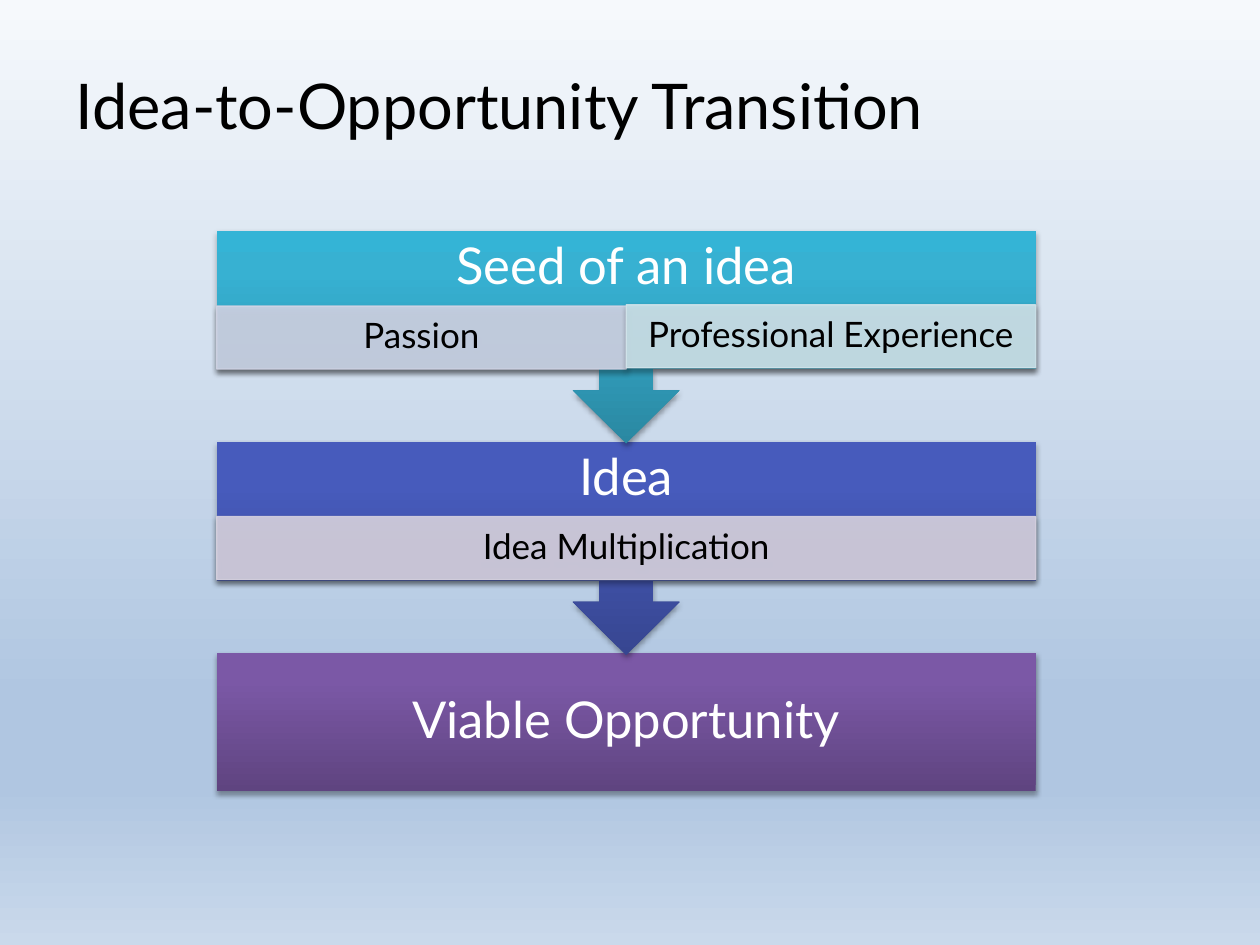
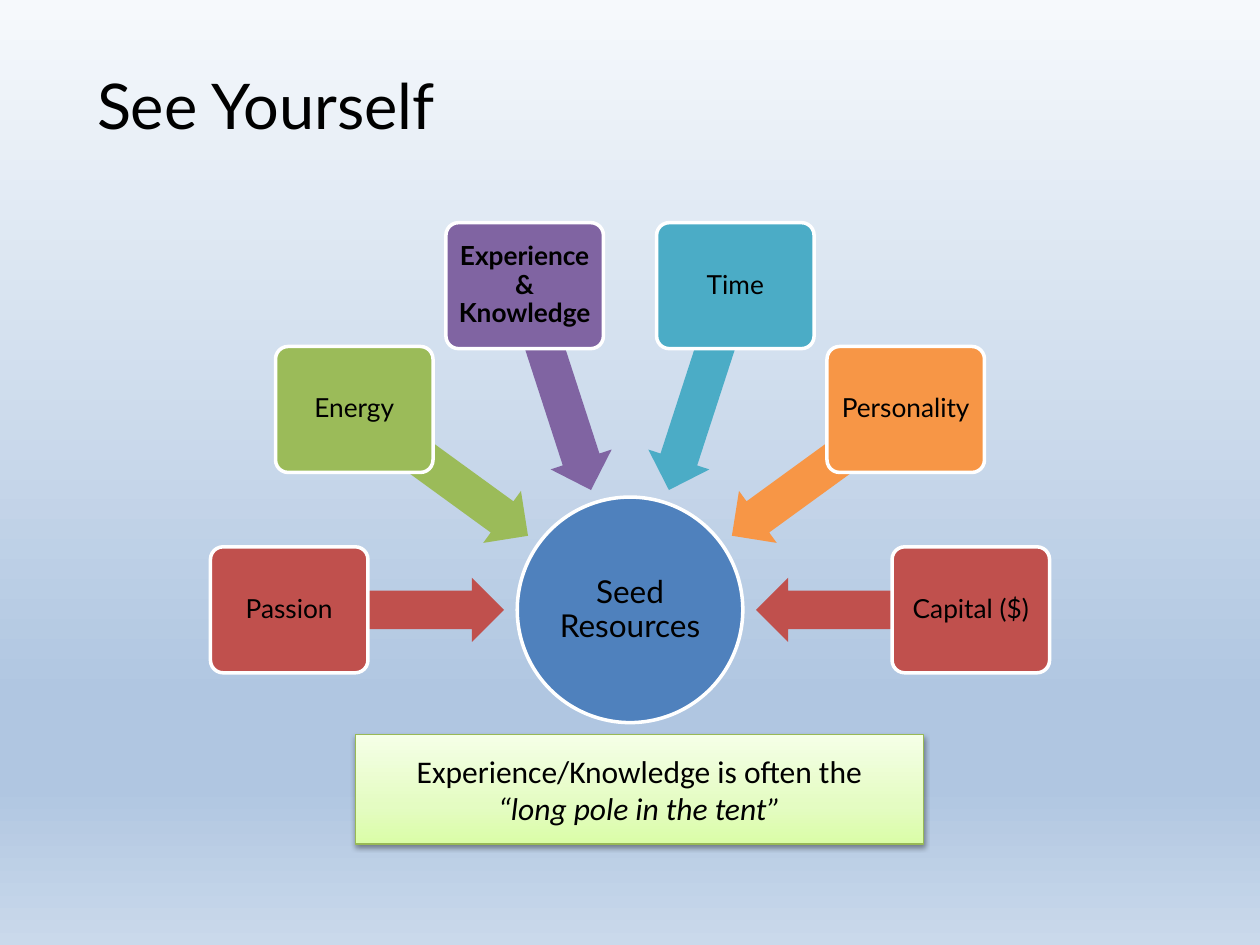
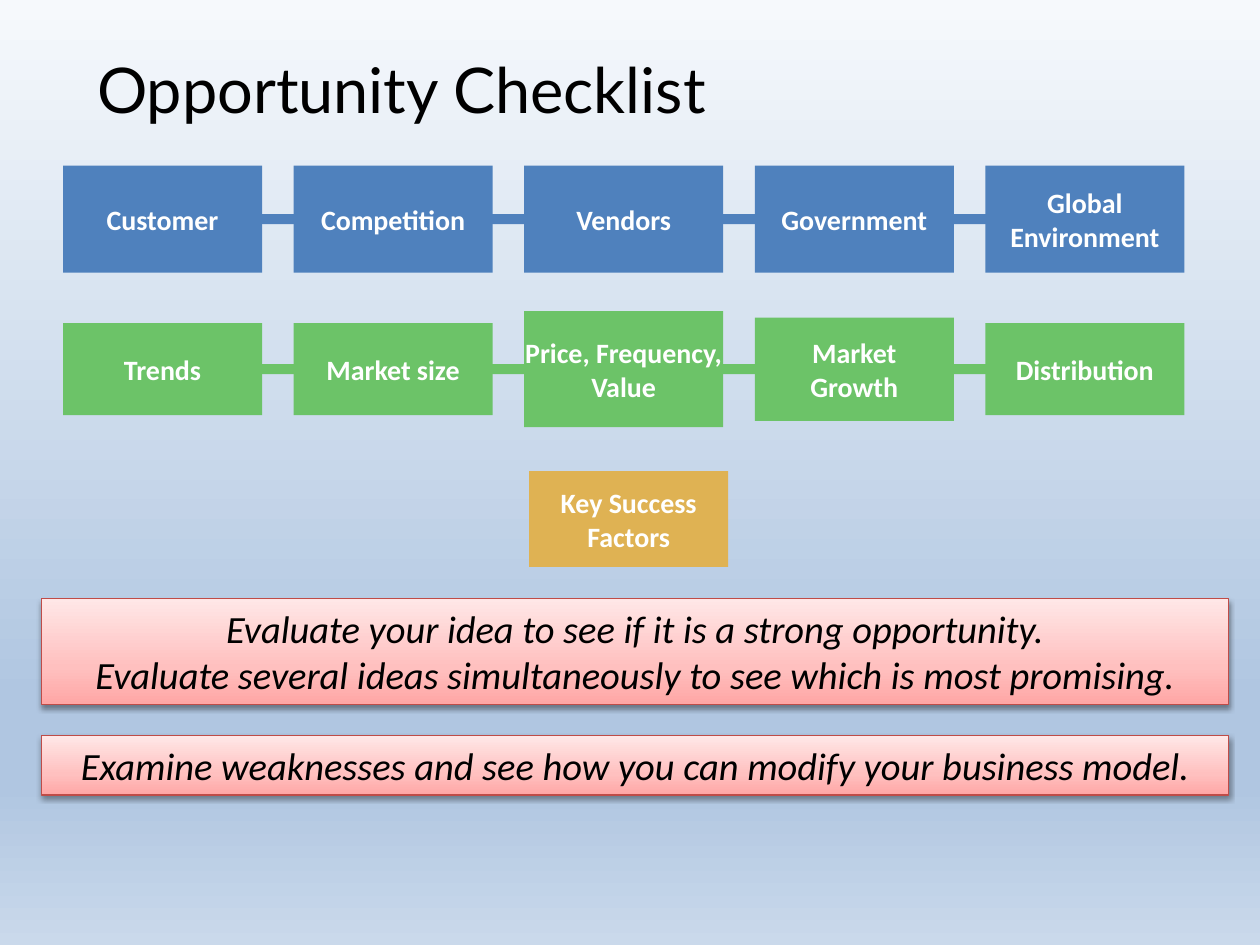
from math import cos, sin, radians

from lxml.etree import SubElement
from pptx import Presentation
from pptx.dml.color import RGBColor
from pptx.enum.shapes import MSO_SHAPE as SHAPE
from pptx.enum.text import MSO_ANCHOR, PP_ALIGN as ALIGN
from pptx.oxml.ns import qn
from pptx.util import Inches, Pt

COLORS = {
    "black": "000000", "white": "FFFFFF",
    "blue": "4F81BD", "red": "C0504D", "lime": "9BBB59", "purple": "8064A2",
    "teal": "4BACC6", "orange": "F79646", "green": "6CC368", "gold": "DFB253",
    "pale_blue": "D1D4E5", "pale_teal": "D0E3EA", "pale_purple": "D8D3E0",
    "lime_edge": "98B955", "red_edge": "BF4C48",
}
GRADIENTS = {
    "background": [(0, "F6F9FC"), (74, "B0C6E1"), (83, "B0C6E1"), (100, "CAD9EB")],
    "teal": [(0, "2A88A2"), (80, "37B1D2"), (100, "34B4D6")],
    "indigo": [(0, "374691"), (80, "475BBC"), (100, "455ABF")],
    "violet": [(0, "5F4480"), (80, "7B58A6"), (100, "7C57A8")],
    "lime": [(0, "DAFDA7"), (35, "E4FCC2"), (100, "F5FFE7")],
    "pink": [(0, "FFA6A5"), (35, "FFC0BF"), (100, "FFE7E7")],
}
HEADING, BODY = "Lato", "Calibri"

STAGES = [
    ("Seed of an idea", "teal", 1.83),
    ("Idea", "indigo", 3.51),
    ("Viable Opportunity", "violet", 5.18),
]
INPUTS = [
    ("Passion", "pale_blue", 1.72, 2.43, 3.25),
    ("Professional Experience", "pale_teal", 4.97, 2.42, 3.25),
    ("Idea Multiplication", "pale_purple", 1.72, 4.1, 6.5),
]
RESOURCES = [
    ("Passion", "red"),
    ("Energy", "lime"),
    ("Experience & Knowledge", "purple"),
    ("Time", "teal"),
    ("Personality", "orange"),
    ("Capital ($)", "red"),
]
POLE_NOTE = ["Experience/Knowledge is often the", "“long pole in the tent”"]
CHECK_ROWS = [
    ("green", 2.93, 8.5, [
        (["Trends"], 0.73),
        (["Market size"], 0.73),
        (["Price, Frequency,", "Value"], 0.92),
        (["Market", "Growth"], 0.82),
        (["Distribution"], 0.73),
    ]),
    ("blue", 1.74, 8.67, [
        (["Customer"], 0.85),
        (["Competition"], 0.85),
        (["Vendors"], 0.85),
        (["Government"], 0.85),
        (["Global", "Environment"], 0.85),
    ]),
]
ADVICE = [
    (4.75, 0.84, ["Evaluate your idea to see if it is a strong opportunity.",
                  "Evaluate several ideas simultaneously to see which is most promising."]),
    (5.84, 0.47, ["Examine weaknesses and see how you can modify your business model."]),
]


def rgb(name):
    return RGBColor.from_string(COLORS[name])


def set_gradient(fill, element, name, angle):
    fill.gradient()
    fill.gradient_angle = angle
    stops = element.find(".//" + qn("a:gsLst"))
    stops.clear()
    for pos, color in GRADIENTS[name]:
        gs = SubElement(stops, qn("a:gs"), pos=str(pos * 1000))
        SubElement(gs, qn("a:srgbClr"), val=color)


def add_shadow(sp, alpha, dist):
    effects = sp.element.spPr.find(qn("a:effectLst"))
    shadow = SubElement(effects, qn("a:outerShdw"), blurRad=str(Pt(3.1)), dist=str(Pt(dist)),
                        dir="5400000", rotWithShape="0")
    color = SubElement(shadow, qn("a:srgbClr"), val=COLORS["black"])
    SubElement(color, qn("a:alpha"), val=str(alpha * 1000))


def add_box(s, kind, x, y, w, h, color=None, gradient=None, edge=None, edge_width=0.75,
            alpha=None, shadow=None):
    sp = s.shapes.add_shape(kind, Inches(x), Inches(y), Inches(w), Inches(h))
    sp.shadow.inherit = False
    if gradient:
        set_gradient(sp.fill, sp.element, gradient, 90)
    else:
        sp.fill.solid()
        sp.fill.fore_color.rgb = rgb(color)
    if edge:
        sp.line.color.rgb = rgb(edge)
        sp.line.width = Pt(edge_width)
    else:
        sp.line.fill.background()
    if alpha:
        for clr in sp.element.spPr.iter(qn("a:srgbClr")):
            SubElement(clr, qn("a:alpha"), val=str(alpha * 1000))
    if shadow:
        add_shadow(sp, *shadow)
    return sp


def write(sp, lines, size=16, color="black", font=HEADING, bold=False, italic_from=None,
          align=ALIGN.CENTER, spacing=None, insets=(0.1, 0.05, 0.1, 0.05), wrap=True):
    tf = sp.text_frame
    tf.word_wrap = wrap
    tf.vertical_anchor = MSO_ANCHOR.MIDDLE
    tf.margin_left, tf.margin_top, tf.margin_right, tf.margin_bottom = map(Inches, insets)
    for i, line in enumerate(lines):
        p = tf.add_paragraph() if i else tf.paragraphs[0]
        p.alignment = align
        if spacing:
            p.line_spacing = spacing
        r = p.add_run()
        r.text = line
        r.font.name = font
        r.font.size = Pt(size)
        r.font.bold = bold
        r.font.italic = italic_from is not None and i >= italic_from
        r.font.color.rgb = rgb(color)


def add_slide(prs, title, x, y, w, h):
    s = prs.slides.add_slide(prs.slide_layouts[5])
    sp = s.shapes.title
    sp.left, sp.top, sp.width, sp.height = map(Inches, (x, y, w, h))
    write(sp, [title], size=36, align=ALIGN.LEFT)
    return s


def build_transition(prs):
    s = add_slide(prs, "Idea-to-Opportunity Transition", 0.5, 0.29, 9.09, 1.08)
    soft = (35, 1.8)
    for i, (label, gradient, y) in reversed(list(enumerate(STAGES))):
        last = i == len(STAGES) - 1
        kind, h = (SHAPE.RECTANGLE, 1.1) if last else (SHAPE.DOWN_ARROW_CALLOUT, 1.69)
        sp = add_box(s, kind, 1.72, y, 6.5, h, gradient=gradient, shadow=soft)
        write(sp, [label], size=29, color="white", spacing=0.9,
              insets=(0.23, 0, 0.23, 0 if last else 0.51))
    for label, color, x, y, w in INPUTS:
        sp = add_box(s, SHAPE.RECTANGLE, x, y, w, 0.5, color, edge=color, alpha=90, shadow=soft)
        write(sp, [label], size=20, spacing=0.9, insets=(0.16, 0.03, 0.16, 0.03))


def build_resources(prs):
    s = add_slide(prs, "See Yourself", 0.67, 0.29, 8.92, 1.08)
    cx, cy, hub = 5, 4.84, 1.79
    arrow_w, arrow_h, arrow_radius = 1.71, 0.51, 1.855
    box_w, box_h, box_radius = 1.25, 1, 2.705
    sp = add_box(s, SHAPE.OVAL, cx - hub / 2, cy - hub / 2, hub, hub, "blue",
                 edge="white", edge_width=2)
    write(sp, ["Seed Resources"], size=18, spacing=0.9, insets=(0.01,) * 4)
    step = 180 / (len(RESOURCES) - 1)
    for i, (label, color) in enumerate(RESOURCES):
        dx, dy = cos(radians(i * step)), sin(radians(i * step))
        arrow = add_box(s, SHAPE.LEFT_ARROW, cx - arrow_radius * dx - arrow_w / 2,
                        cy - arrow_radius * dy - arrow_h / 2, arrow_w, arrow_h, color)
        arrow.adjustments[0] = 0.6
        arrow.rotation = (180 + i * step) % 360
        box = add_box(s, SHAPE.ROUNDED_RECTANGLE, cx - box_radius * dx - box_w / 2,
                      cy - box_radius * dy - box_h / 2, box_w, box_h, color,
                      edge="white", edge_width=2)
        box.adjustments[0] = 0.1
        write(box, [label], size=15, bold="Knowledge" in label, spacing=0.9, insets=(0.03,) * 4)
    note = add_box(s, SHAPE.RECTANGLE, 2.82, 5.83, 4.51, 0.87, gradient="lime",
                   edge="lime_edge", shadow=(38, 1.6))
    write(note, POLE_NOTE, size=18, font=BODY, italic_from=1)


def build_checklist(prs):
    s = add_slide(prs, "Opportunity Checklist", 0.67, 0.08, 9, 1.25)
    box_w, pitch, bar_h = 1.58, 1.83, 0.08
    label_format = dict(color="white", font=BODY, bold=True, wrap=False)
    for color, mid, bar_w, boxes in CHECK_ROWS:
        add_box(s, SHAPE.RECTANGLE, 0.58, mid - bar_h / 2, bar_w, bar_h, color)
        for i, (lines, h) in enumerate(boxes):
            sp = add_box(s, SHAPE.RECTANGLE, 0.5 + i * pitch, mid - h / 2, box_w, h, color)
            write(sp, lines, **label_format)
    sp = add_box(s, SHAPE.RECTANGLE, 4.2, 3.74, box_w, 0.76, "gold")
    write(sp, ["Key Success", "Factors"], **label_format)
    for y, h, lines in ADVICE:
        sp = add_box(s, SHAPE.RECTANGLE, 0.33, y, 9.42, h, gradient="pink",
                     edge="red_edge", shadow=(38, 1.6))
        write(sp, lines, size=22, font=BODY, italic_from=0)


def main():
    prs = Presentation()
    prs.slide_width, prs.slide_height = Inches(10), Inches(7.5)
    master = prs.slide_master
    set_gradient(master.background.fill, master.element, "background", 270)
    build_transition(prs)
    build_resources(prs)
    build_checklist(prs)
    prs.save("out.pptx")


if __name__ == "__main__":
    main()
